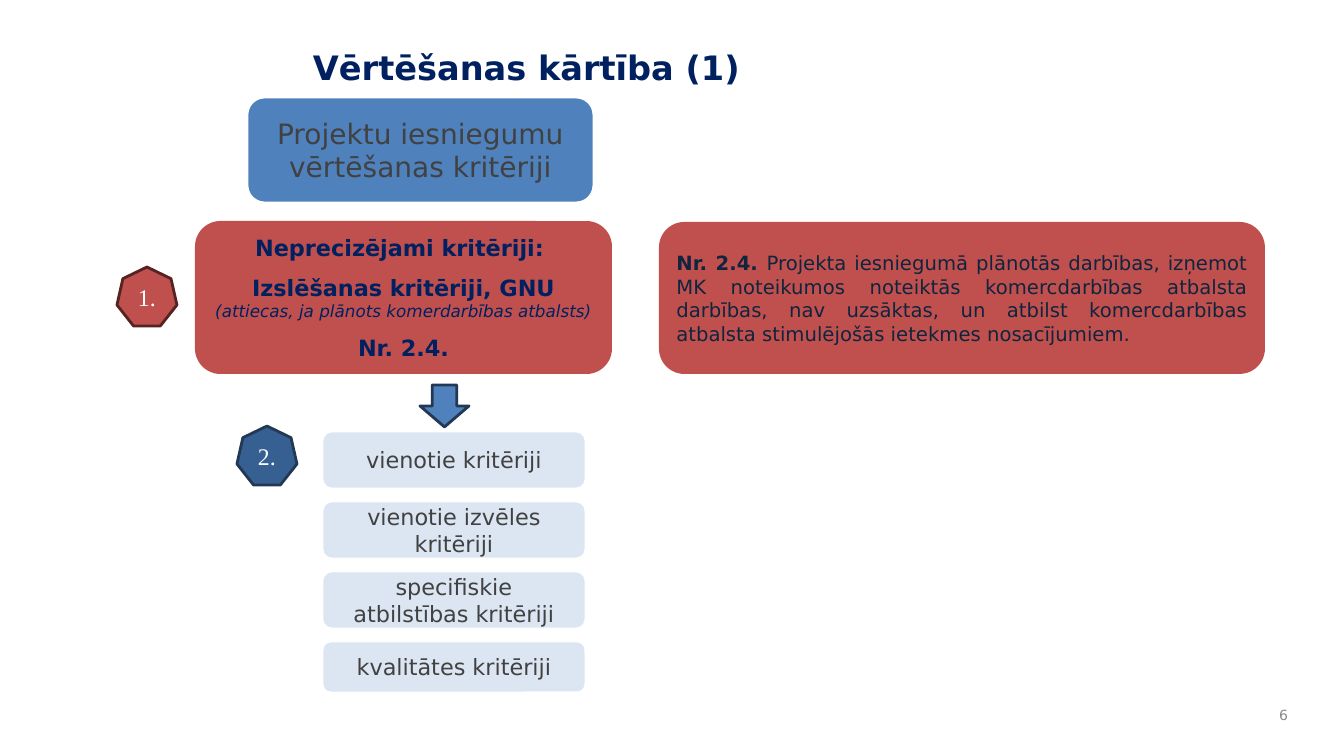
from pptx import Presentation
from pptx import util as u
from pptx.dml.color import RGBColor
from pptx.enum import shapes, text

EMU_PER_PX = 914400 / 100.8

WHITE = RGBColor(0xFF, 0xFF, 0xFF)
NAVY = RGBColor(0x00, 0x20, 0x60)
INK = RGBColor(0x0F, 0x24, 0x3E)
CHARCOAL = RGBColor(0x41, 0x41, 0x42)
GREY = RGBColor(0x89, 0x89, 0x89)
BLUE = RGBColor(0x4F, 0x81, 0xBD)
DEEP_BLUE = RGBColor(0x37, 0x60, 0x92)
PALE_BLUE = RGBColor(0xDC, 0xE6, 0xF2)
RED = RGBColor(0xC0, 0x50, 0x4D)
DARK_RED = RGBColor(0x54, 0x23, 0x22)
DARK_BLUE = RGBColor(0x23, 0x39, 0x53)

SHAPE = shapes.MSO_SHAPE
ALIGN = text.PP_ALIGN
ANCHOR = text.MSO_ANCHOR


def px(length):
    return u.Emu(round(length * EMU_PER_PX))


class SlideBuilder:
    font = "DejaVu Sans"
    badge_font = "Times New Roman"

    def __init__(self, page):
        self.page = page

    def set_frame(self, box, anchor, inset=10):
        frame = box.text_frame
        frame.word_wrap = True
        frame.vertical_anchor = anchor
        frame.margin_left = frame.margin_right = px(inset)
        frame.margin_top = frame.margin_bottom = px(5)

    def add_text(self, box, content, size, color, align=ALIGN.CENTER, bold=False,
                 italic=False, font=None, gap=0):
        """Fill the first paragraph, or append one when text is already there."""
        frame = box.text_frame
        para = frame.add_paragraph() if frame.text else frame.paragraphs[0]
        para.alignment = align
        if gap:
            para.space_before = u.Pt(gap)
        para.font.name = font or self.font
        para.font.size = u.Pt(size)
        para.font.color.rgb = color
        para.font.bold = bold
        para.font.italic = italic
        para.add_run().text = content
        return para

    def label(self, area, content, size, color, align, anchor, bold=False):
        box = self.page.shapes.add_textbox(*map(px, area))
        self.set_frame(box, anchor)
        self.add_text(box, content, size, color, align, bold)

    def shape(self, kind, area, fill, line=None, inset=10):
        box = self.page.shapes.add_shape(kind, *map(px, area))
        box.shadow.inherit = False
        box.fill.solid()
        box.fill.fore_color.rgb = fill
        if line is None:
            box.line.fill.background()
        else:
            box.line.color.rgb = line
            box.line.width = u.Pt(2)
        self.set_frame(box, ANCHOR.MIDDLE, inset)
        return box

    def card(self, area, fill, content, size):
        box = self.shape(SHAPE.ROUNDED_RECTANGLE, area, fill, WHITE)
        self.add_text(box, content, size, CHARCOAL)

    def badge(self, left, top, content, fill, line):
        box = self.shape(SHAPE.HEPTAGON, (left, top, 60, 59), fill, line, inset=0)
        self.add_text(box, content, 17, WHITE, font=self.badge_font)


def main():
    deck = Presentation()
    deck.slide_width, deck.slide_height = px(1344), px(756)
    slide = SlideBuilder(deck.slides.add_slide(deck.slide_layouts[6]))

    slide.label((303, 42, 973, 114), "Vērtēšanas kārtība (1)", 24, NAVY,
                ALIGN.LEFT, ANCHOR.TOP, bold=True)
    slide.label((1254, 698, 44, 33), "6", 10, GREY, ALIGN.RIGHT, ANCHOR.MIDDLE)
    slide.card((247, 97, 347, 106), BLUE,
               "Projektu iesniegumu vērtēšanas kritēriji", 20)

    criteria = ["vienotie kritēriji", "vienotie izvēles kritēriji",
                "specifiskie atbilstības kritēriji", "kvalitātes kritēriji"]
    for row, name in enumerate(criteria):
        height = 52 if name == criteria[-1] else 58
        slide.card((322, 431 + 70 * row, 264, height), PALE_BLUE, name, 16)

    exclusion = slide.shape(SHAPE.ROUNDED_RECTANGLE, (195, 221, 417, 153), RED)
    slide.add_text(exclusion, "Neprecizējami kritēriji: ", 16, NAVY, bold=True)
    slide.add_text(exclusion, "Izslēšanas kritēriji, GNU", 16, NAVY, bold=True, gap=9.5)
    slide.add_text(exclusion, "(attiecas, ja plānots komerdarbības atbalsts)", 12, NAVY,
                   italic=True)
    slide.add_text(exclusion, "Nr. 2.4.", 16, NAVY, bold=True, gap=9.5)

    detail = slide.shape(SHAPE.ROUNDED_RECTANGLE, (659, 222, 606, 152), RED)
    para = slide.add_text(detail, "Nr. 2.4. ", 14, INK, ALIGN.JUSTIFY)
    para.runs[0].font.bold = True
    para.add_run().text = (
        "Projekta iesniegumā plānotās darbības, izņemot MK noteikumos noteiktās "
        "komercdarbības atbalsta darbības, nav uzsāktas, un atbilst komercdarbības "
        "atbalsta stimulējošās ietekmes nosacījumiem.")

    slide.badge(117, 267, "1.", RED, DARK_RED)
    slide.badge(237, 426, "2.", DEEP_BLUE, DARK_BLUE)
    slide.shape(SHAPE.DOWN_ARROW, (420, 385, 49, 42), BLUE, DARK_BLUE)

    deck.save("out.pptx")


if __name__ == "__main__":
    main()
